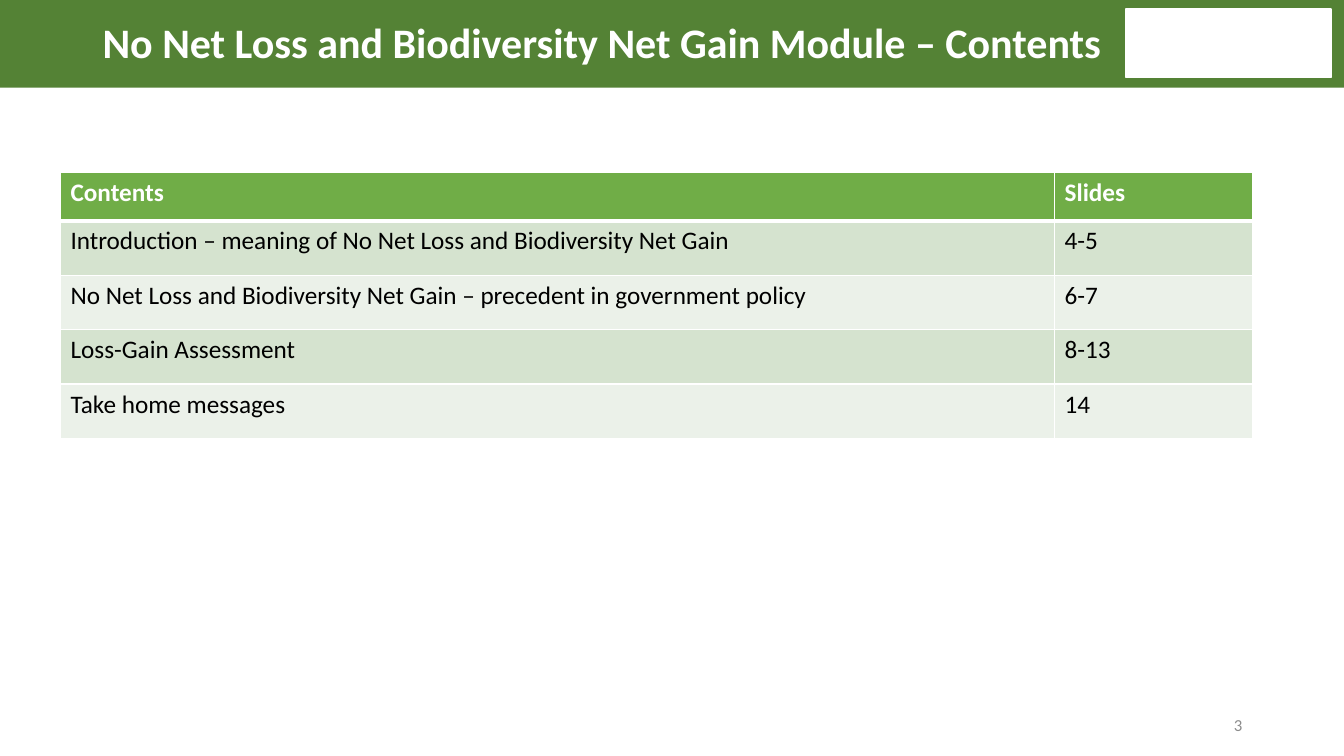
from pptx import Presentation, util as u
from pptx.dml.color import RGBColor
from pptx.enum import shapes, text
from pptx.oxml import parse_xml
from pptx.oxml.ns import nsdecls

PX = 9144


def color(hex_string):
    return RGBColor.from_string(hex_string)


def add_text(paragraph, words, size, hex_string, bold=False):
    run = paragraph.add_run()
    run.text = words
    run.font.name = "Calibri"
    run.font.size = u.Pt(size)
    run.font.bold = bold
    run.font.color.rgb = color(hex_string)


presentation = Presentation()
presentation.slide_width = 1333 * PX
presentation.slide_height = 750 * PX
slide = presentation.slides.add_slide(presentation.slide_layouts[5])

panels = [
    (0, -3, 1333, 90, "548235", False),
    (1117, 9, 203, 68, "FFFFFF", True),
]
for left, top, width, height, fill, outlined in panels:
    shape = slide.shapes.add_shape(
        shapes.MSO_SHAPE.RECTANGLE, left * PX, top * PX, width * PX, height * PX)
    shape.shadow.inherit = False
    shape.fill.solid()
    shape.fill.fore_color.rgb = color(fill)
    if outlined:
        shape.line.color.rgb = color(fill)
        shape.line.width = u.Pt(1)
    else:
        shape.line.fill.background()

title = slide.shapes.title
slide.shapes.element.append(title.element)
title.left, title.top, title.width, title.height = 80 * PX, 0, 1035 * PX, 90 * PX
title.text_frame.word_wrap = True
title.text_frame.auto_size = text.MSO_AUTO_SIZE.NONE
title.text_frame.vertical_anchor = text.MSO_ANCHOR.MIDDLE
paragraph = title.text_frame.paragraphs[0]
paragraph.alignment = text.PP_ALIGN.CENTER
paragraph.line_spacing = 0.9
add_text(paragraph, "No Net Loss and Biodiversity Net Gain Module – Contents", 30, "FFFFFF", True)

contents = [
    ("Contents", "Slides"),
    ("Introduction – meaning of No Net Loss and Biodiversity Net Gain", "4-5"),
    ("No Net Loss and Biodiversity Net Gain – precedent in government policy", "6-7"),
    ("Loss-Gain Assessment", "8-13"),
    ("Take home messages", "14"),
]
table = slide.shapes.add_table(
    len(contents), 2, 60 * PX, 171 * PX, 1182 * PX, 264 * PX).table
table.columns[0].width = 986 * PX
table.columns[1].width = 196 * PX
for row, entries in enumerate(contents):
    header = row == 0
    table.rows[row].height = (48 if header else 54) * PX
    fill = "70AD47" if header else ("EBF1E9", "D5E3CF")[row % 2]
    for column, words in enumerate(entries):
        cell = table.cell(row, column)
        for side in "LRTB":
            thick = (header and side == "B") or (row == 1 and side == "T")
            width = u.Pt(3 if thick else 1)
            cell._tc.get_or_add_tcPr().append(parse_xml(
                f'<a:ln{side} {nsdecls("a")} w="{width}"><a:solidFill>'
                f'<a:srgbClr val="FFFFFF"/></a:solidFill></a:ln{side}>'))
        cell.fill.solid()
        cell.fill.fore_color.rgb = color(fill)
        add_text(cell.text_frame.paragraphs[0], words, 18,
                 "FFFFFF" if header else "000000", header)

number_box = slide.shapes.add_textbox(1154 * PX, 704 * PX, 88 * PX, 31 * PX)
number_box.text_frame.word_wrap = True
number_box.text_frame.vertical_anchor = text.MSO_ANCHOR.MIDDLE
paragraph = number_box.text_frame.paragraphs[0]
paragraph.alignment = text.PP_ALIGN.RIGHT
add_text(paragraph, "3", 12, "8C8C8C")

presentation.save("out.pptx")
